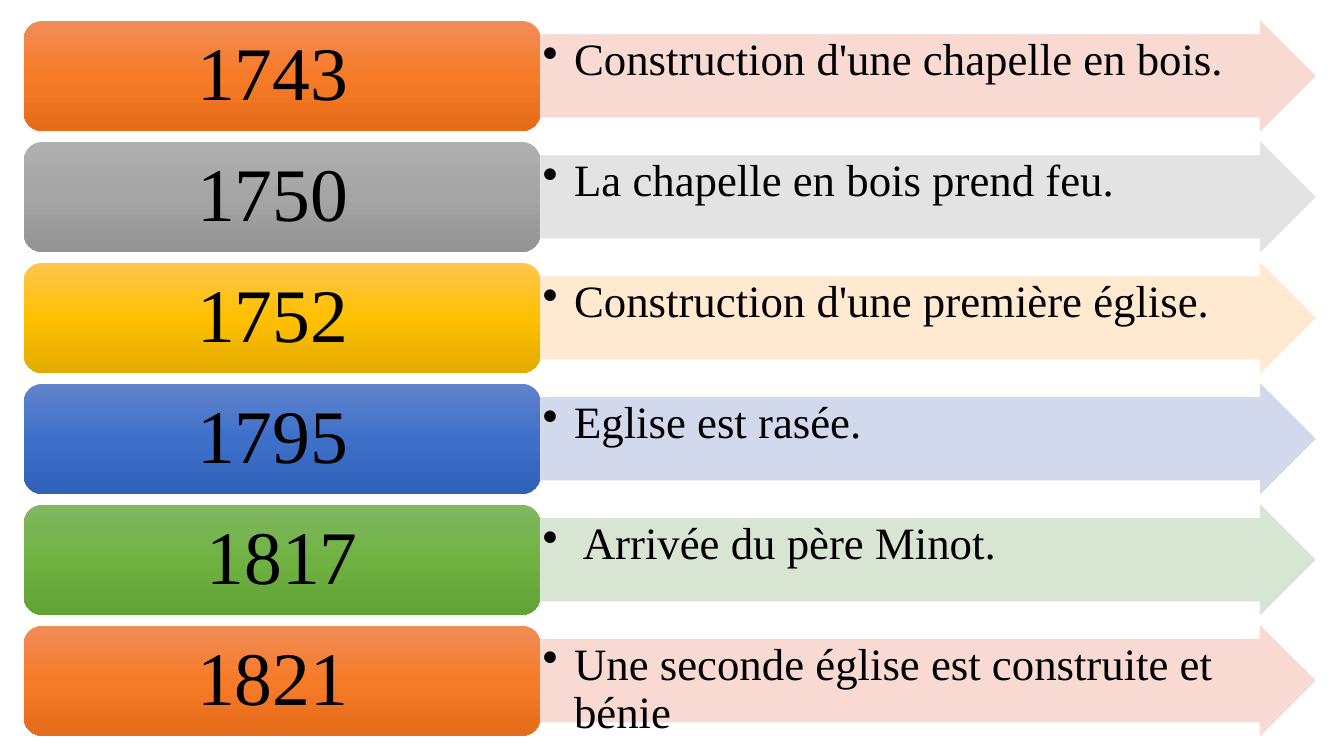
from copy import deepcopy
from dataclasses import dataclass
from itertools import cycle

from lxml import etree
from pptx import Presentation
from pptx.dml.color import RGBColor
from pptx.enum.shapes import MSO_SHAPE
from pptx.enum.text import MSO_ANCHOR, PP_ALIGN
from pptx.oxml.ns import qn
from pptx.shapes.autoshape import Shape
from pptx.slide import Slide
from pptx.util import Pt

ROUNDED, ARROW = MSO_SHAPE.ROUNDED_RECTANGLE, MSO_SHAPE.RIGHT_ARROW
TOP, MIDDLE = MSO_ANCHOR.TOP, MSO_ANCHOR.MIDDLE
LEFT, CENTER = PP_ALIGN.LEFT, PP_ALIGN.CENTER
BLANK_LAYOUT = 6


@dataclass(frozen=True)
class Palette:
    gradient: tuple[str, str, str]
    tint: str


@dataclass(frozen=True)
class Theme:
    palettes: tuple[Palette, ...]
    font: str = "Times New Roman"
    text_color: str = "000000"
    year_size: float = 54
    event_size: float = 32
    line_spacing: float = 0.9
    tint_opacity: int = 90


@dataclass(frozen=True)
class Milestone:
    year: str
    event: str


THEME = Theme(palettes=(
    Palette(("F18C57", "F67B28", "E56C19"), "F8D7CE"),
    Palette(("AFAFAF", "A5A5A5", "939393"), "E1E1E1"),
    Palette(("FFC64B", "FFC000", "E3AB00"), "FFE8CC"),
    Palette(("6183CB", "3E70CA", "3062BB"), "CFD5EA"),
    Palette(("81B861", "6FB242", "62A336"), "D5E3CF"),
))

MILESTONES = (
    Milestone("1743 ", "Construction d'une chapelle en bois."),
    Milestone("1750 ", "La chapelle en bois prend feu."),
    Milestone("1752 ", "Construction d'une première église."),
    Milestone("1795 ", "Eglise est rasée."),
    Milestone("1817", " Arrivée du père Minot."),
    Milestone("1821 ", "Une seconde église est construite et bénie"),
)

SLIDE_WIDTH, SLIDE_HEIGHT = 960, 540
YEAR_LEFT, YEAR_WIDTH = 17, 369
EVENT_LEFT, EVENT_WIDTH = YEAR_LEFT + YEAR_WIDTH, 553.5
FIRST_TOP, ROW_HEIGHT, ROW_PITCH = 15, 78.5, 86.4
BULLET_INDENT = 22.5


def add_block(slide: Slide, kind: int, left: float, top: float, width: float) -> Shape:
    block = slide.shapes.add_shape(kind, Pt(left), Pt(top), Pt(width), Pt(ROW_HEIGHT))
    block.shadow.inherit = False
    return block


def fill_gradient(block: Shape, colors: tuple[str, ...]) -> None:
    """Shade the block from top to bottom with three evenly spaced colours."""
    block.fill.gradient()
    block.fill.gradient_angle = 270
    stop_list = block.element.spPr.find(".//" + qn("a:gsLst"))
    stop_list.append(deepcopy(stop_list[-1]))
    for index, (stop, color) in enumerate(zip(block.fill.gradient_stops, colors)):
        stop.color.rgb = RGBColor.from_string(color)
        stop.position = index / (len(colors) - 1)
    block.line.fill.background()


def fill_tint(block: Shape, color: str) -> None:
    """Give fill and outline the same slightly transparent colour."""
    block.line.width = Pt(0.5)
    for fill in (block.fill, block.line.fill):
        fill.solid()
        fill.fore_color.rgb = RGBColor.from_string(color)
    for element in block.element.spPr.iter(qn("a:srgbClr")):
        etree.SubElement(element, qn("a:alpha"), val=str(THEME.tint_opacity * 1000))


def set_text(block: Shape, text: str, *, size: float, align: int, anchor: int,
             inset_x: float, inset_y: float, bullet: bool = False) -> None:
    frame = block.text_frame
    frame.word_wrap = True
    frame.vertical_anchor = anchor
    frame.margin_left = frame.margin_right = Pt(inset_x)
    frame.margin_top = frame.margin_bottom = Pt(inset_y)
    para = frame.paragraphs[0]
    para.alignment = align
    para.line_spacing = THEME.line_spacing
    span = para.add_run()
    span.text = text
    span.font.name = THEME.font
    span.font.size = Pt(size)
    span.font.color.rgb = RGBColor.from_string(THEME.text_color)
    if bullet:
        para.level = 1
        properties = para._p.get_or_add_pPr()
        properties.set("marL", str(Pt(BULLET_INDENT)))
        properties.set("indent", str(-Pt(BULLET_INDENT)))
        etree.SubElement(properties, qn("a:buChar"), char="•")


def add_milestone(slide: Slide, milestone: Milestone, palette: Palette, top: float) -> None:
    event = add_block(slide, ARROW, EVENT_LEFT, top, EVENT_WIDTH)
    event.adjustments[0] = 0.75
    event.adjustments[1] = 0.5
    fill_tint(event, palette.tint)
    set_text(event, milestone.event, size=THEME.event_size, align=LEFT, anchor=TOP,
             inset_x=1.6, inset_y=1.6, bullet=True)

    year = add_block(slide, ROUNDED, YEAR_LEFT, top, YEAR_WIDTH)
    fill_gradient(year, palette.gradient)
    set_text(year, milestone.year, size=THEME.year_size, align=CENTER, anchor=MIDDLE,
             inset_x=16.2, inset_y=8.1)


def main() -> None:
    deck = Presentation()
    deck.slide_width, deck.slide_height = Pt(SLIDE_WIDTH), Pt(SLIDE_HEIGHT)
    page = deck.slides.add_slide(deck.slide_layouts[BLANK_LAYOUT])
    for row, (milestone, palette) in enumerate(zip(MILESTONES, cycle(THEME.palettes))):
        add_milestone(page, milestone, palette, FIRST_TOP + row * ROW_PITCH)
    deck.save("out.pptx")


if __name__ == "__main__":
    main()
